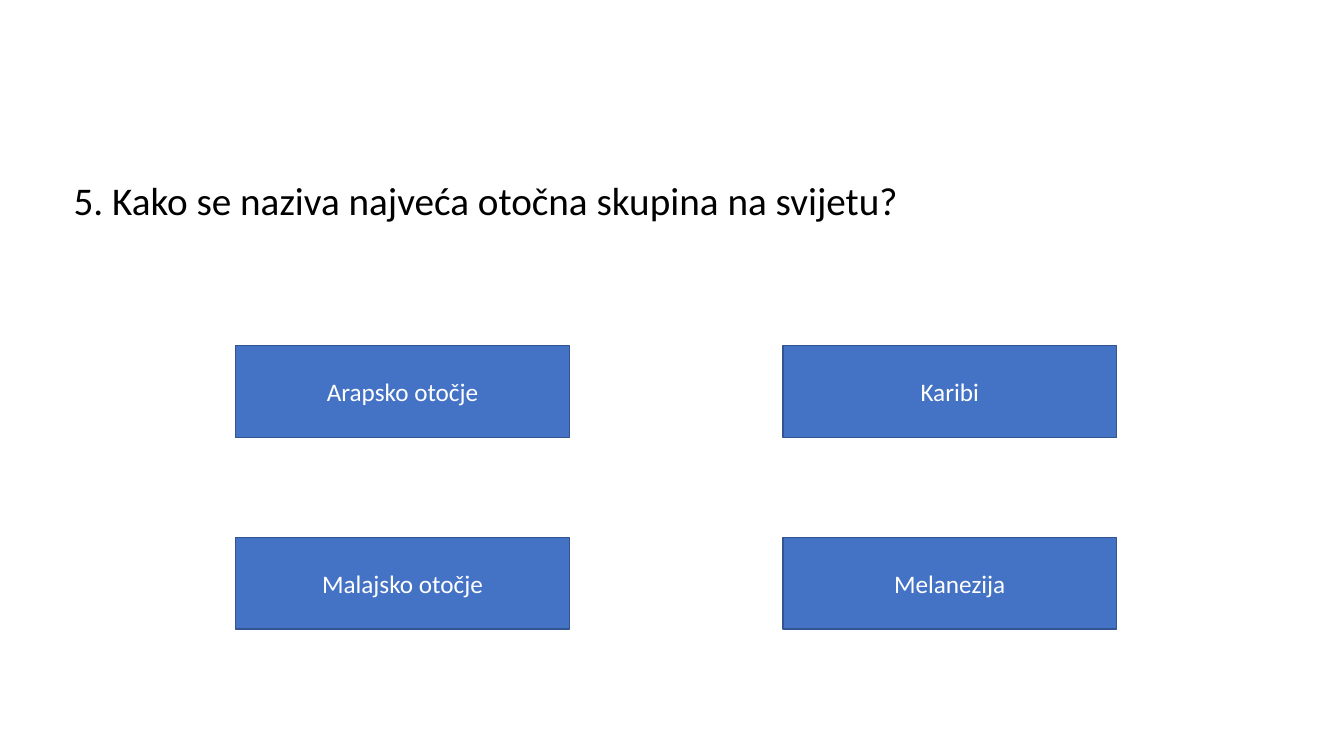
from pptx import Presentation
from pptx import util as u
from pptx.dml.color import RGBColor
from pptx.enum import shapes, text

BLACK = RGBColor(0x00, 0x00, 0x00)
WHITE = RGBColor(0xFF, 0xFF, 0xFF)
BLUE = RGBColor(0x44, 0x72, 0xC4)
NAVY = RGBColor(0x32, 0x54, 0x91)

ANSWERS = [["Arapsko otočje", "Karibi"], ["Malajsko otočje", "Melanezija"]]
LEFT, TOP = 5.94, 8.71
WIDTH, HEIGHT = 8.41, 2.31
STEP_X, STEP_Y = 13.79, 4.83


def write(frame, words, font="Calibri", size=18, color=BLACK,
          align=text.PP_ALIGN.LEFT, anchor=text.MSO_ANCHOR.TOP):
    """Fill a text frame with one formatted paragraph."""
    frame.word_wrap = True
    frame.auto_size = text.MSO_AUTO_SIZE.NONE
    frame.vertical_anchor = anchor
    para = frame.paragraphs[0]
    para.alignment = align
    run = para.add_run()
    run.text = words
    run.font.name = font
    run.font.size = u.Pt(size)
    run.font.color.rgb = color


class Quiz:
    """Hold the quiz style and the current slide."""

    def __init__(self, slide, font="Calibri"):
        self.slide = slide
        self.font = font

    def title(self, words, left, top, width, height):
        """Place the question in the title placeholder."""
        box = self.slide.shapes.title
        box.left, box.top = u.Cm(left), u.Cm(top)
        box.width, box.height = u.Cm(width), u.Cm(height)
        write(box.text_frame, words, font=self.font, size=28)

    def answer(self, words, left, top):
        """Draw one answer box."""
        box = self.slide.shapes.add_shape(
            shapes.MSO_SHAPE.RECTANGLE,
            u.Cm(left), u.Cm(top), u.Cm(WIDTH), u.Cm(HEIGHT))
        box.shadow.inherit = False
        box.fill.solid()
        box.fill.fore_color.rgb = BLUE
        box.line.color.rgb = NAVY
        box.line.width = u.Pt(1)
        write(box.text_frame, words, font=self.font, color=WHITE,
              align=text.PP_ALIGN.CENTER, anchor=text.MSO_ANCHOR.MIDDLE)


def main():
    """Build and save the question slide."""
    deck = Presentation()
    deck.slide_width, deck.slide_height = u.Cm(33.87), u.Cm(19.05)
    quiz = Quiz(deck.slides.add_slide(deck.slide_layouts[5]))
    quiz.title("5. Kako se naziva najveća otočna skupina na svijetu?",
               1.6, 4.32, 30, 1.45)
    for row, names in enumerate(ANSWERS):
        for col, name in enumerate(names):
            quiz.answer(name, LEFT + col * STEP_X, TOP + row * STEP_Y)
    deck.save("out.pptx")


if __name__ == "__main__":
    main()
